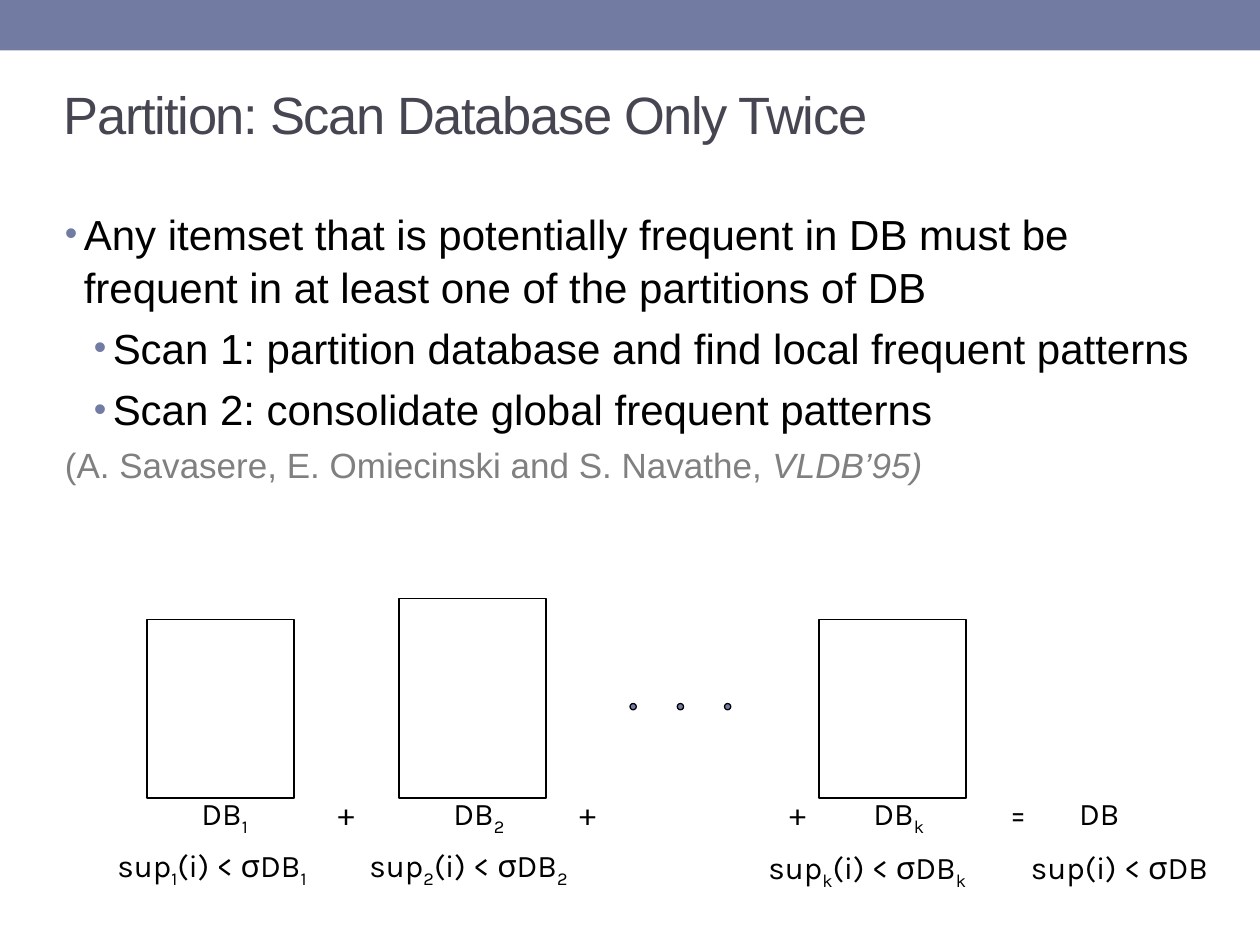
from lxml.etree import SubElement
from pptx import Presentation
from pptx.dml.color import RGBColor
from pptx.enum.shapes import MSO_SHAPE
from pptx.enum.text import MSO_ANCHOR
from pptx.oxml.ns import qn
from pptx.util import Inches, Pt

BAND = RGBColor(0x72, 0x7C, 0xA3)
TITLE = RGBColor(0x46, 0x46, 0x53)
BLACK = RGBColor(0, 0, 0)
GRAY = RGBColor(0x80, 0x80, 0x80)

deck = Presentation()
deck.slide_width, deck.slide_height = Inches(10), Inches(7.5)
page = deck.slides.add_slide(deck.slide_layouts[6])

# The page is a grid of 120 columns by 90 rows
COLUMN = deck.slide_width / 120
ROW = deck.slide_height / 90


def add_box(column, row, columns, rows, kind=None, fill=None, line=None):
    """Place a preset shape, or a wrapping text box when kind is None."""
    area = [int(size) for size in
            (column * COLUMN, row * ROW, columns * COLUMN, rows * ROW)]
    if kind is None:
        box = page.shapes.add_textbox(*area)
        box.text_frame.word_wrap = True
        return box
    box = page.shapes.add_shape(kind, *area)
    box.shadow.inherit = False
    if fill is None:
        box.fill.background()
    else:
        box.fill.solid()
        box.fill.fore_color.rgb = fill
    if line is None:
        box.line.fill.background()
    else:
        box.line.color.rgb = line
        box.line.width = Pt(0.75)
    return box


def add_span(para, text, color=BLACK, subscript=False, **font):
    span = para.add_run()
    span.text = text
    span.font.color.rgb = color
    for name, value in font.items():
        setattr(span.font, name, value)
    if subscript:
        span.font._element.set("baseline", "-25000")
    return span


# Band and title
add_box(0, 0, 120, 4.8, MSO_SHAPE.RECTANGLE, BAND)
title = add_box(4.9, 6.8, 102.2, 8).text_frame
title.vertical_anchor = MSO_ANCHOR.MIDDLE
span = add_span(title.paragraphs[0], "Partition: Scan Database Only Twice",
                TITLE, name="Arial", size=Pt(30))
span.font._element.set("spc", "-80")

# Bullets: level, left margin in inches, text
bullets = [
    (0, 0.15, "Any itemset that is potentially frequent in DB must be "
              "frequent in at least one of the partitions of DB"),
    (1, 0.38, "Scan 1: partition database and find local frequent patterns"),
    (1, 0.38, "Scan 2: consolidate global frequent patterns"),
]
body = add_box(5, 19, 111, 36).text_frame
for number, (level, margin, text) in enumerate(bullets):
    para = body.add_paragraph() if number else body.paragraphs[0]
    para.level = level
    para.line_spacing = 1.05
    if number:
        para.space_before = Pt(4.8)
    properties = para._p.get_or_add_pPr()
    properties.set("marL", str(Inches(margin)))
    properties.set("indent", str(Inches(-0.15)))
    color = SubElement(properties, qn("a:buClr"))
    SubElement(color, qn("a:srgbClr"), val=str(BAND))
    SubElement(properties, qn("a:buSzPct"), val="85000")
    SubElement(properties, qn("a:buFont"), typeface="Arial")
    SubElement(properties, qn("a:buChar"), char="•")
    add_span(para, text, name="Arial", size=Pt(24))

citation = body.add_paragraph()
citation.space_before = Pt(4)
citation.line_spacing = 1.05
for text, italic in (("(A. Savasere, E. Omiecinski and S. Navathe, ", False),
                     ("VLDB’95)", True)):
    add_span(citation, text, GRAY, name="Arial", size=Pt(20), italic=italic)

# Partitions: all stand on the same row
BASE = 76
for column, rows in ((14, 17), (38, 19), (78, 17)):
    add_box(column, BASE - rows, 14, rows, MSO_SHAPE.RECTANGLE, line=BLACK)
for number in range(3):
    add_box(60 + 4.5 * number, 67, 0.6, 0.6, MSO_SHAPE.OVAL, BAND, BLACK)

# Labels: column, row, columns, spans (every second span is a subscript)
labels = [(column, 75, 3, ["+"]) for column in (31, 54, 74)]
for index, name_column, sup_column, sup_row in (
        ("1", 18, 10, 80), ("2", 42, 34, 80), ("k", 82, 72, 80.2)):
    labels.append((name_column, 75, 8, ["DB", index]))
    labels.append((sup_column, sup_row, 22, ["sup", index, "(i) < σDB", index]))
labels += [(95, 75, 18, ["=\tDB"]), (97, 80.2, 22, ["sup(i) < σDB"])]

for column, row, columns, texts in labels:
    para = add_box(column, row, columns, 4.8).text_frame.paragraphs[0]
    if "\t" in texts[0]:
        tabs = SubElement(para._p.get_or_add_pPr(), qn("a:tabLst"))
        SubElement(tabs, qn("a:tab"), pos=str(Inches(0.55)), algn="l")
    for number, text in enumerate(texts):
        add_span(para, text, subscript=number % 2 == 1,
                 name="Karla", size=Pt(18))

deck.save("out.pptx")
